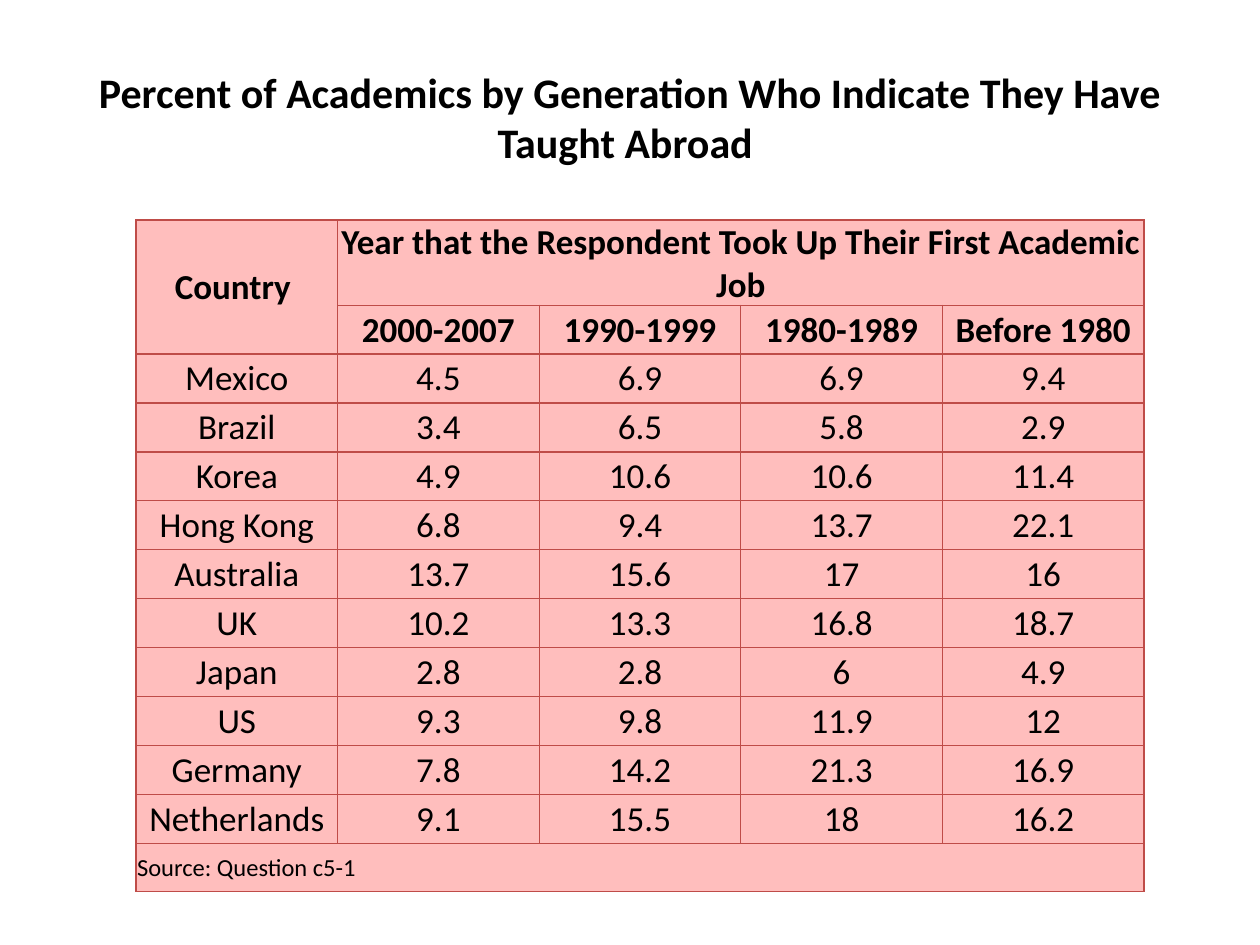
import pptx
import pptx.util
import pptx.dml.color
import pptx.enum.text
import pptx.oxml
import pptx.oxml.ns

TITLE = "Percent of Academics by Generation Who Indicate They Have Taught Abroad "
HEADS = ["2000-2007", "1990-1999", "1980-1989", "Before 1980"]
RATES = [
    ("Mexico", "4.5", "6.9", "6.9", "9.4"),
    ("Brazil", "3.4", "6.5", "5.8", "2.9"),
    ("Korea", "4.9", "10.6", "10.6", "11.4"),
    ("Hong Kong", "6.8", "9.4", "13.7", "22.1"),
    ("Australia", "13.7", "15.6", "17", "16"),
    ("UK", "10.2", "13.3", "16.8", "18.7"),
    ("Japan", "2.8", "2.8", "6", "4.9"),
    ("US", "9.3", "9.8", "11.9", "12"),
    ("Germany", "7.8", "14.2", "21.3", "16.9"),
    ("Netherlands", "9.1", "15.5", "18", "16.2"),
]
ROWS = [
    ["Country ", "Year that the Respondent Took Up Their First Academic Job", "", "", ""],
    ["", *HEADS],
    *RATES,
    ["Source: Question c5-1", "", "", "", ""],
]
HIGHS = [85, 49] + [49] * len(RATES) + [48]
PINK, RED, BLACK = "FFBEBD", "BF4C48", "000000"


def px(num):
    """Turn pixels into EMU."""
    return pptx.util.Emu(round(num * 914400 / 126))


def color(code):
    """Turn a hex string into a colour."""
    return pptx.dml.color.RGBColor.from_string(code)


def write(frame, text, size=20, bold=False, align="CENTER"):
    """Put formatted text into a frame."""
    para = frame.paragraphs[0]
    para.alignment = getattr(pptx.enum.text.PP_ALIGN, align)
    run = para.add_run()
    run.text = text
    run.font.name = "Calibri"
    run.font.size = pptx.util.Pt(size)
    run.font.bold = bold
    run.font.color.rgb = color(BLACK)


def border(cell):
    """Draw thin lines on all four sides of a cell."""
    props = cell._tc.get_or_add_tcPr()
    for side in "LRTB":
        props.append(pptx.oxml.parse_xml(
            f'<a:ln{side} {pptx.oxml.ns.nsdecls("a")} w="9525"><a:solidFill>'
            f'<a:srgbClr val="{RED}"/></a:solidFill></a:ln{side}>'))


def style(cell):
    """Give a cell its lines, fill, margins and anchor."""
    border(cell)
    cell.fill.solid()
    cell.fill.fore_color.rgb = color(PINK)
    cell.margin_left = cell.margin_right = cell.margin_top = px(1)
    cell.margin_bottom = 0
    cell.vertical_anchor = pptx.enum.text.MSO_ANCHOR.MIDDLE


def add_title(slide):
    """Add the slide title."""
    frame = slide.shapes.add_textbox(px(63), px(38), px(1134), px(157)).text_frame
    frame.word_wrap = True
    frame.vertical_anchor = pptx.enum.text.MSO_ANCHOR.MIDDLE
    write(frame, TITLE, size=24, bold=True)


def add_rates(slide):
    """Add the table of rates by country and generation."""
    grid = slide.shapes.add_table(
        len(ROWS), 5, px(136), px(220), px(1008), px(sum(HIGHS))).table
    grid.first_row = grid.horz_banding = False
    last = len(ROWS) - 1
    for r, (row, high) in enumerate(zip(ROWS, HIGHS)):
        grid.rows[r].height = px(high)
        look = {"size": 14, "align": "LEFT"} if r == last else {"bold": r < 2}
        for c, text in enumerate(row):
            cell = grid.cell(r, c)
            style(cell)
            if text:
                write(cell.text_frame, text, **look)
    for start, end in [((0, 0), (1, 0)), ((0, 1), (0, 4)), ((last, 0), (last, 4))]:
        grid.cell(*start).merge(grid.cell(*end))


def main():
    """Build and save the slide."""
    deck = pptx.Presentation()
    deck.slide_width, deck.slide_height = px(1260), px(945)
    slide = deck.slides.add_slide(deck.slide_layouts[6])
    add_title(slide)
    add_rates(slide)
    deck.save("out.pptx")


if __name__ == "__main__":
    main()
